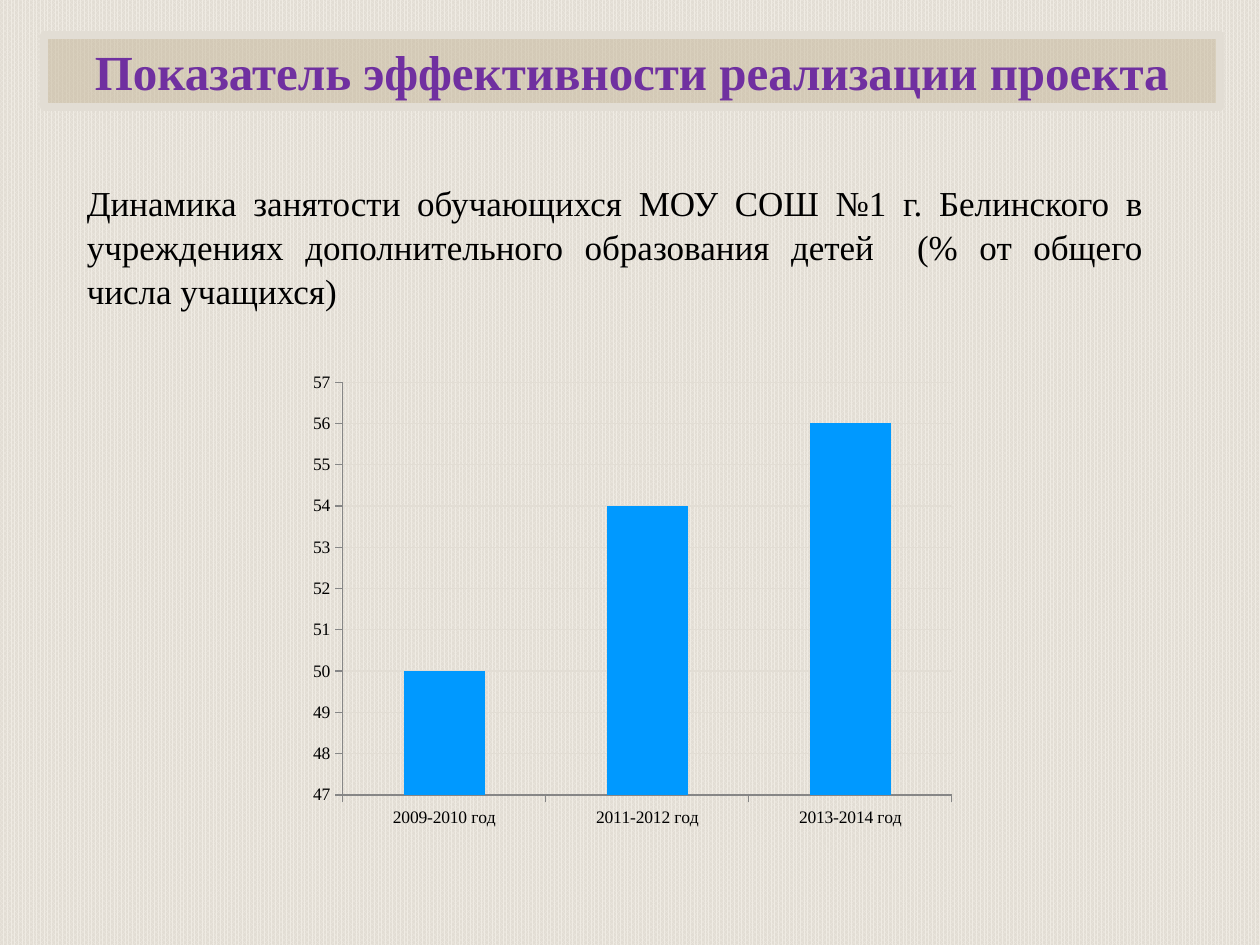
from pptx import Presentation
from pptx.chart.data import CategoryChartData
from pptx.dml.color import RGBColor
from pptx.enum.chart import XL_CHART_TYPE, XL_TICK_MARK
from pptx.enum.dml import MSO_PATTERN
from pptx.enum.shapes import MSO_SHAPE
from pptx.enum.text import MSO_ANCHOR, PP_ALIGN
from pptx.oxml.ns import qn
from pptx.util import Inches, Pt
from lxml import etree

FONT = "Times New Roman"
COLORS = {
    "paper": "EFEBE3",
    "stripe": "E2DDD4",
    "banner": "C5B699",
    "title": "7030A0",
    "text": "000000",
    "axis": "868686",
    "bar": "0099FF",
}


def color(name):
    return RGBColor.from_string(COLORS[name])


def write_text(frame, text, size, color_name="text", bold=False,
               align=PP_ALIGN.LEFT, anchor=MSO_ANCHOR.TOP, spacing=None):
    frame.word_wrap = True
    frame.vertical_anchor = anchor
    paragraph = frame.paragraphs[0]
    paragraph.alignment = align
    paragraph.line_spacing = spacing
    run = paragraph.add_run()
    run.text = text
    run.font.name = FONT
    run.font.size = Pt(size)
    run.font.bold = bold
    run.font.color.rgb = color(color_name)


def paint_background(slide):
    fill = slide.background.fill
    fill.patterned()
    fill.pattern = MSO_PATTERN.PERCENT_80
    fill.fore_color.rgb = color("paper")
    fill.back_color.rgb = color("stripe")


def add_title_banner(slide, left, top, width, height):
    banner = slide.shapes.add_shape(MSO_SHAPE.RECTANGLE, left, top, width, height)
    banner.shadow.inherit = False
    banner.fill.solid()
    banner.fill.fore_color.rgb = color("banner")
    banner.line.color.rgb = color("stripe")
    banner.line.width = Pt(4.5)
    # Half-transparent fill
    tint = banner._element.spPr.find(qn("a:solidFill"))[0]
    etree.SubElement(tint, qn("a:alpha")).set("val", "50000")
    write_text(banner.text_frame, "Показатель эффективности реализации проекта",
               size=28, color_name="title", bold=True, align=PP_ALIGN.CENTER)


def add_description(slide, left, top, width, height):
    description = slide.shapes.add_textbox(left, top, width, height)
    write_text(description.text_frame,
               "Динамика занятости обучающихся МОУ СОШ №1 г. Белинского в "
               "учреждениях дополнительного образования детей  "
               "(% от общего числа учащихся)",
               size=20, align=PP_ALIGN.JUSTIFY, anchor=MSO_ANCHOR.MIDDLE,
               spacing=1.05)


def add_attendance_chart(slide, left, top, width, height):
    attendance = CategoryChartData()
    attendance.categories = ["2009-2010 год", "2011-2012 год", "2013-2014 год"]
    attendance.add_series("Series 1", (50, 54, 56))
    chart = slide.shapes.add_chart(XL_CHART_TYPE.COLUMN_CLUSTERED,
                                   left, top, width, height, attendance).chart
    chart.has_legend = False
    chart.has_title = False
    chart.font.name = FONT
    chart.font.size = Pt(10)
    chart.font.color.rgb = color("text")

    # Bars
    plot = chart.plots[0]
    plot.gap_width = 150
    plot.vary_by_categories = False
    bars = plot.series[0]
    bars.invert_if_negative = False
    bars.format.fill.solid()
    bars.format.fill.fore_color.rgb = color("bar")

    # Axes and grid
    for axis in (chart.category_axis, chart.value_axis):
        axis.major_tick_mark = XL_TICK_MARK.OUTSIDE
        axis.minor_tick_mark = XL_TICK_MARK.NONE
        axis.format.line.color.rgb = color("axis")
        axis.format.line.width = Pt(0.75)
    percent_axis = chart.value_axis
    percent_axis.minimum_scale = 47
    percent_axis.maximum_scale = 57
    percent_axis.major_unit = 1
    percent_axis.has_major_gridlines = True
    grid = percent_axis.major_gridlines.format.line
    grid.color.rgb = color("stripe")
    grid.width = Pt(0.75)


def main():
    deck = Presentation()
    deck.slide_width, deck.slide_height = Inches(10), Inches(7.5)
    slide = deck.slides.add_slide(deck.slide_layouts[6])
    paint_background(slide)
    add_title_banner(slide, Inches(0.35), Inches(0.28), Inches(9.33), Inches(0.57))
    add_description(slide, Inches(0.59), Inches(1.39), Inches(8.58), Inches(1.11))
    add_attendance_chart(slide, Inches(2.38), Inches(2.88), Inches(5.28), Inches(3.76))
    deck.save("out.pptx")


if __name__ == "__main__":
    main()
